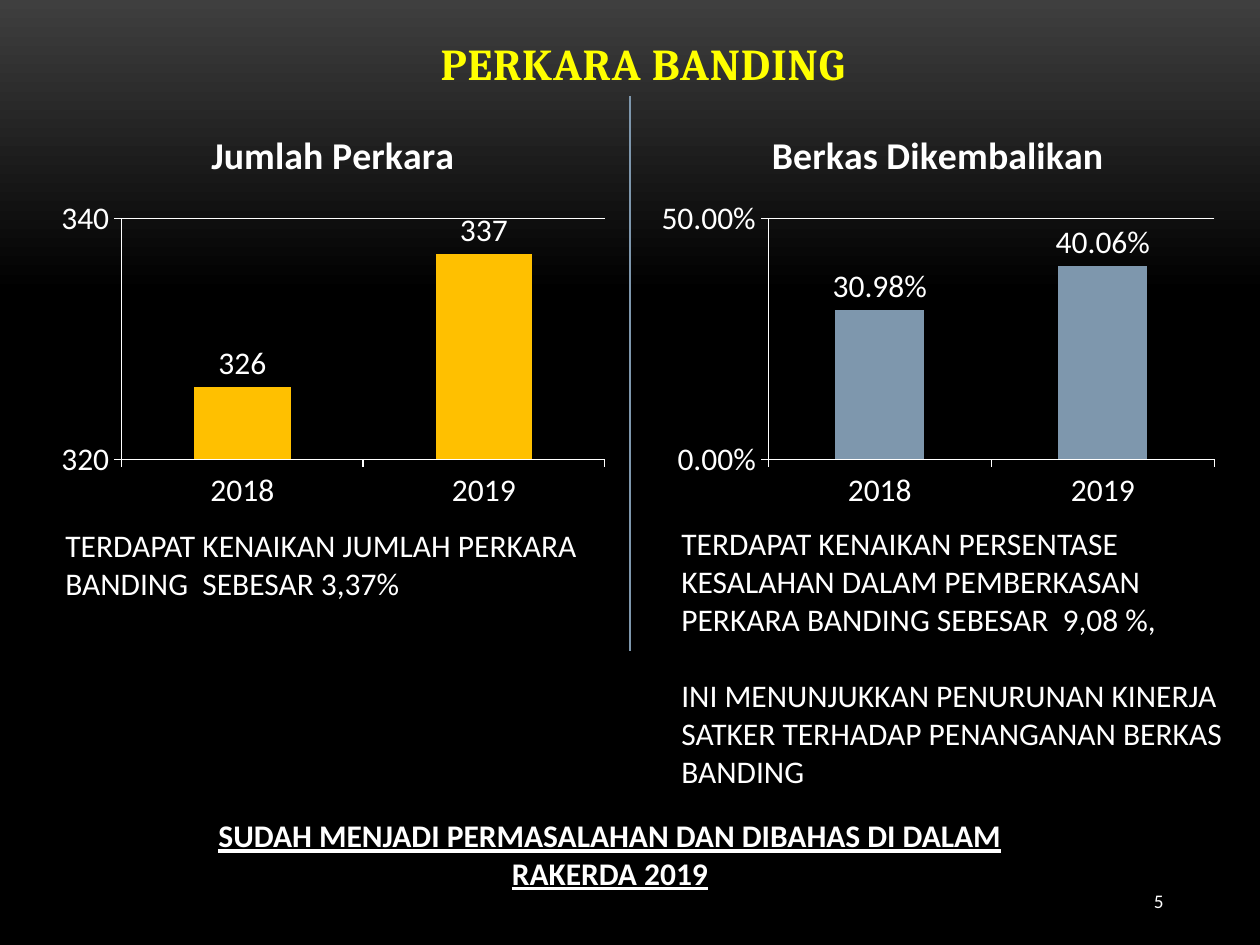
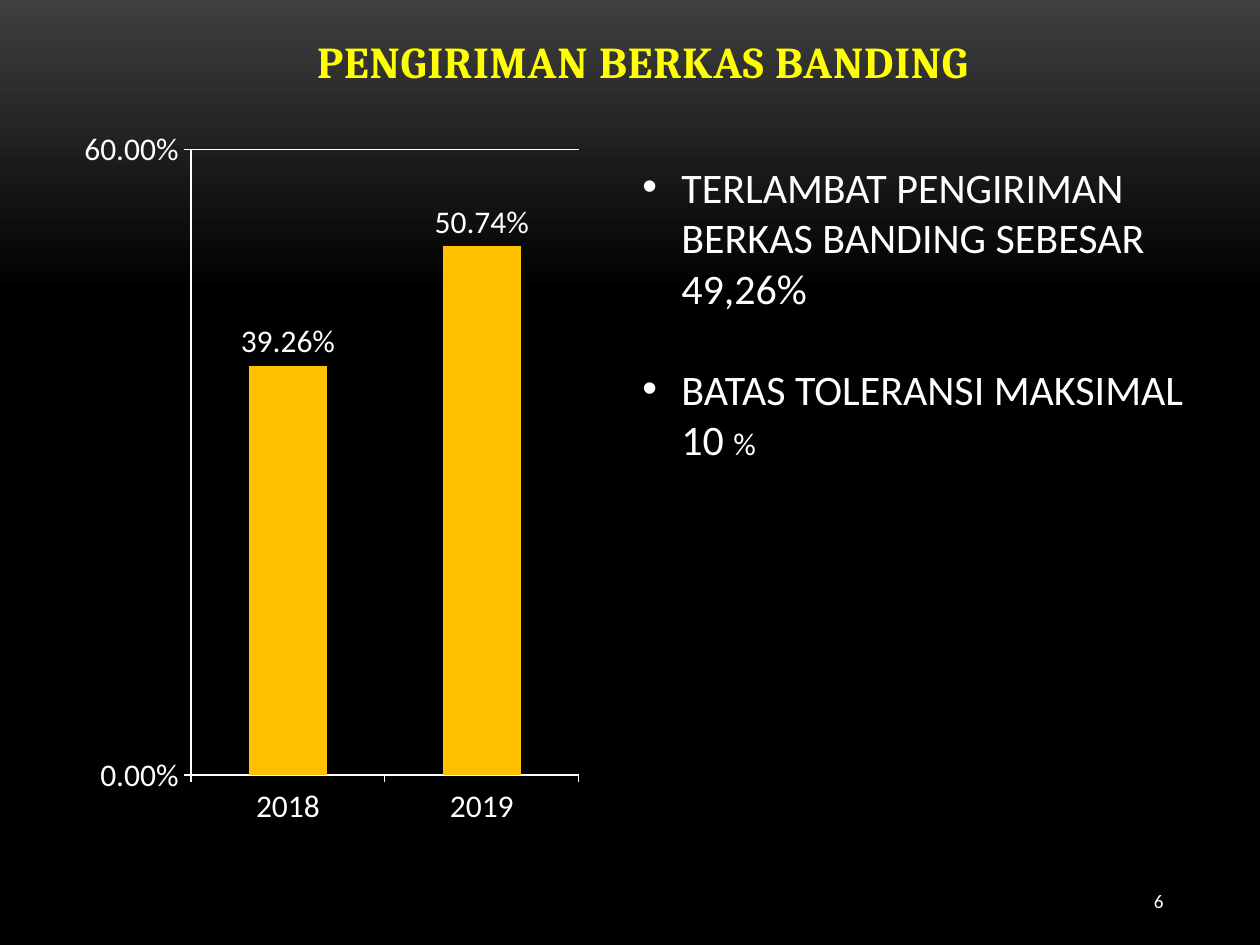
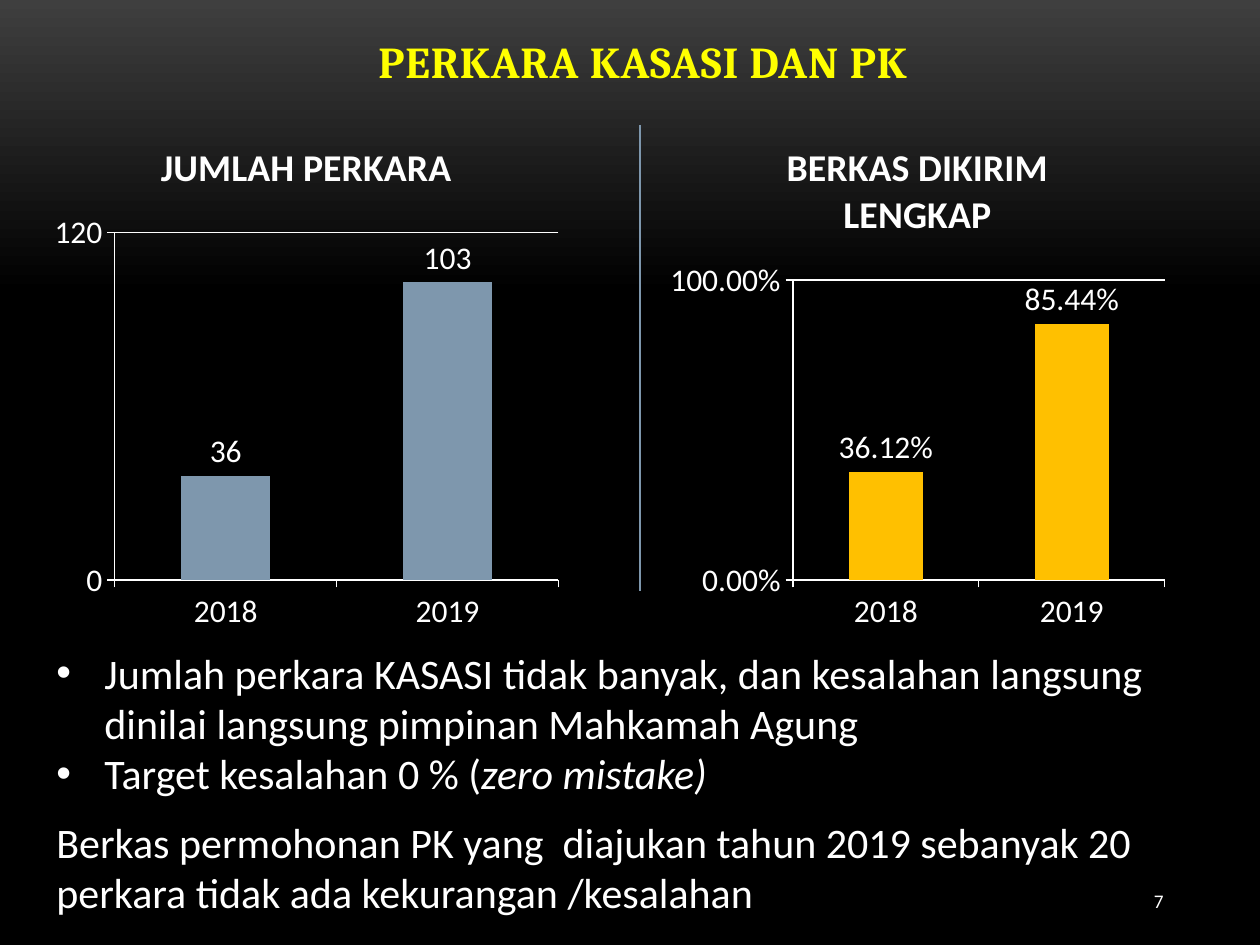
from lxml import etree
from pptx import Presentation
from pptx.chart.data import CategoryChartData
from pptx.dml.color import RGBColor
from pptx.enum.chart import XL_CHART_TYPE, XL_LABEL_POSITION, XL_TICK_MARK
from pptx.enum.shapes import MSO_CONNECTOR
from pptx.enum.text import MSO_ANCHOR, MSO_AUTO_SIZE, PP_ALIGN
from pptx.oxml.ns import qn
from pptx.util import Emu, Pt

COLUMNS = XL_CHART_TYPE.COLUMN_CLUSTERED
OUTSIDE_END = XL_LABEL_POSITION.OUTSIDE_END
TICK_OUTSIDE = XL_TICK_MARK.OUTSIDE
STRAIGHT = MSO_CONNECTOR.STRAIGHT
TOP, MIDDLE, BOTTOM = MSO_ANCHOR.TOP, MSO_ANCHOR.MIDDLE, MSO_ANCHOR.BOTTOM
GROW = MSO_AUTO_SIZE.SHAPE_TO_FIT_TEXT
LEFT, CENTER, RIGHT = PP_ALIGN.LEFT, PP_ALIGN.CENTER, PP_ALIGN.RIGHT

EMU_PER_PX = 914400 / 126
SLIDE_WIDTH, SLIDE_HEIGHT = 1260, 945
FIRST_NUMBER = 5
YEARS = ("2018", "2019")
PERCENT = "0.00%"
BODY_FONT, TITLE_FONT = "Calibri", "Cambria"
COLORS = {
    "glow": "3F3F3F",
    "night": "000000",
    "title": "FFFF00",
    "text": "FFFFFF",
    "gold": "FFC000",
    "steel": "7E97AD",
}


def px(length):
    return Emu(round(length * EMU_PER_PX))


def color(name):
    return RGBColor.from_string(COLORS[name])


def style_font(font, size, bold=False, tint="text", name=BODY_FONT):
    font.name = name
    font.size = Pt(size)
    font.bold = bold
    font.color.rgb = color(tint)


def set_background(deck):
    fill = deck.slide_master.background.fill
    fill.gradient()
    fill.gradient_angle = 270
    for stop, name, position in zip(fill.gradient_stops, ("glow", "night"), (0, 0.31)):
        stop.color.rgb = color(name)
        stop.position = position


def add_text(page, area, lines, size, align=LEFT, anchor=TOP, gap=0, **style):
    box = page.shapes.add_textbox(*map(px, area))
    frame = box.text_frame
    frame.word_wrap = True
    frame.vertical_anchor = anchor
    if anchor == TOP:
        frame.auto_size = GROW
    frame.text = "\n".join(lines)
    for index, para in enumerate(frame.paragraphs):
        para.alignment = align
        if index:
            para.space_before = Pt(gap)
        for span in para.runs:
            style_font(span.font, size, **style)
    return frame.paragraphs


def add_bullets(paragraphs, indent):
    for para in paragraphs:
        properties = para._p.get_or_add_pPr()
        properties.set("marL", str(px(indent)))
        properties.set("indent", str(-px(indent)))
        etree.SubElement(properties, qn("a:buFont")).set("typeface", "Arial")
        etree.SubElement(properties, qn("a:buChar")).set("char", "•")


def add_ending(para, text, size, italic=False):
    span = para.add_run()
    span.text = text
    style_font(span.font, size)
    span.font.italic = italic


def add_page(deck, number, title, title_top=26):
    page = deck.slides.add_slide(deck.slide_layouts[6])
    heading, = add_text(page, (97, title_top, 1092, 68), [title], 25.2, CENTER, BOTTOM,
                        bold=True, tint="title", name=TITLE_FONT)
    heading.runs[0]._r.get_or_add_rPr().set("spc", "50")
    add_text(page, (1040, 876, 136, 50), [str(number)], 11, RIGHT, MIDDLE)
    return page


def add_divider(page, x, top, bottom):
    line = page.shapes.add_connector(STRAIGHT, px(x), px(top), px(x), px(bottom))
    line.line.color.rgb = color("steel")
    line.line.width = Pt(0.75)
    etree.SubElement(line._element.spPr, qn("a:effectLst"))


def style_line(line):
    line.color.rgb = color("text")
    line.width = Pt(0.75)


def add_columns(page, area, values, tint, low, high, title=None, number_format="General"):
    data = CategoryChartData(number_format=number_format)
    data.categories = YEARS
    data.add_series(title or "Series 1", values)
    chart = page.shapes.add_chart(COLUMNS, *map(px, area), data).chart
    style_font(chart.font, 18)
    chart.has_legend = False
    chart.has_title = title is not None
    if title:
        frame = chart.chart_title.text_frame
        frame.text = title
        style_font(frame.paragraphs[0].runs[0].font, 21.6, bold=True)

    for axis in (chart.category_axis, chart.value_axis):
        axis.major_tick_mark = TICK_OUTSIDE
        style_font(axis.tick_labels.font, 18)
        style_line(axis.format.line)
    scale = chart.value_axis
    scale.minimum_scale, scale.maximum_scale = low, high
    scale.major_unit = high - low
    scale.tick_labels.number_format = number_format
    scale.tick_labels.number_format_is_linked = False
    style_line(scale.major_gridlines.format.line)

    plot = chart.plots[0]
    plot.gap_width = 150
    plot.vary_by_categories = False
    fill = plot.series[0].format.fill
    fill.solid()
    fill.fore_color.rgb = color(tint)
    plot.has_data_labels = True
    labels = plot.data_labels
    labels.show_value = True
    labels.position = OUTSIDE_END
    labels.number_format = number_format
    labels.number_format_is_linked = False
    style_font(labels.font, 18)


def build_appeals(deck, number):
    page = add_page(deck, number, "PERKARA BANDING", title_top=28)
    add_columns(page, (50, 106, 566, 412), (326, 337), "gold", 320, 340, "Jumlah Perkara")
    add_columns(page, (650, 106, 576, 412), (0.3098, 0.4006), "steel", 0, 0.5,
                "Berkas Dikembalikan", PERCENT)
    add_text(page, (53, 520, 566, 89),
             ["TERDAPAT KENAIKAN JUMLAH PERKARA BANDING  SEBESAR 3,37%"], 18)
    add_text(page, (669, 518, 566, 280), [
        "TERDAPAT KENAIKAN PERSENTASE KESALAHAN DALAM PEMBERKASAN "
        "PERKARA BANDING SEBESAR  9,08 %,",
        "INI MENUNJUKKAN PENURUNAN KINERJA SATKER TERHADAP PENANGANAN BERKAS BANDING",
    ], 18, gap=22)
    add_divider(page, 630, 96, 651)
    conclusion, = add_text(
        page, (203, 810, 814, 89),
        ["SUDAH MENJADI PERMASALAHAN DAN DIBAHAS DI DALAM RAKERDA 2019"],
        18, CENTER, bold=True)
    conclusion.runs[0].font.underline = True


def build_deliveries(deck, number):
    page = add_page(deck, number, "PENGIRIMAN BERKAS BANDING")
    add_columns(page, (74, 116, 515, 724), (0.3926, 0.5074), "gold", 0, 0.6,
                number_format=PERCENT)
    points = add_text(page, (630, 155, 586, 357), [
        "TERLAMBAT PENGIRIMAN BERKAS BANDING SEBESAR 49,26%",
        "BATAS TOLERANSI MAKSIMAL 10 ",
    ], 24, gap=29)
    add_bullets(points, 39)
    add_ending(points[-1], "%", 18)


def build_cassations(deck, number):
    page = add_page(deck, number, "PERKARA KASASI DAN PK")
    add_columns(page, (660, 116, 515, 525), (0.3612, 0.8544), "gold", 0, 1,
                "BERKAS DIKIRIM LENGKAP", PERCENT)
    add_columns(page, (44, 116, 525, 525), (36, 103), "steel", 0, 120, "JUMLAH PERKARA")
    add_divider(page, 640, 125, 591)
    add_text(page, (44, 810, 1181, 115), [
        "Berkas permohonan PK yang  diajukan tahun 2019 sebanyak 20 perkara "
        "tidak ada kekurangan /kesalahan",
    ], 24)
    points = add_text(page, (44, 641, 1181, 165), [
        "Jumlah perkara KASASI tidak banyak, dan kesalahan langsung dinilai "
        "langsung pimpinan Mahkamah Agung",
        "Target kesalahan 0 % (",
    ], 24)
    add_bullets(points, 48)
    add_ending(points[-1], "zero mistake)", 24, italic=True)


def main():
    deck = Presentation()
    deck.slide_width, deck.slide_height = px(SLIDE_WIDTH), px(SLIDE_HEIGHT)
    set_background(deck)
    builders = (build_appeals, build_deliveries, build_cassations)
    for number, build in enumerate(builders, FIRST_NUMBER):
        build(deck, number)
    deck.save("out.pptx")


if __name__ == "__main__":
    main()
